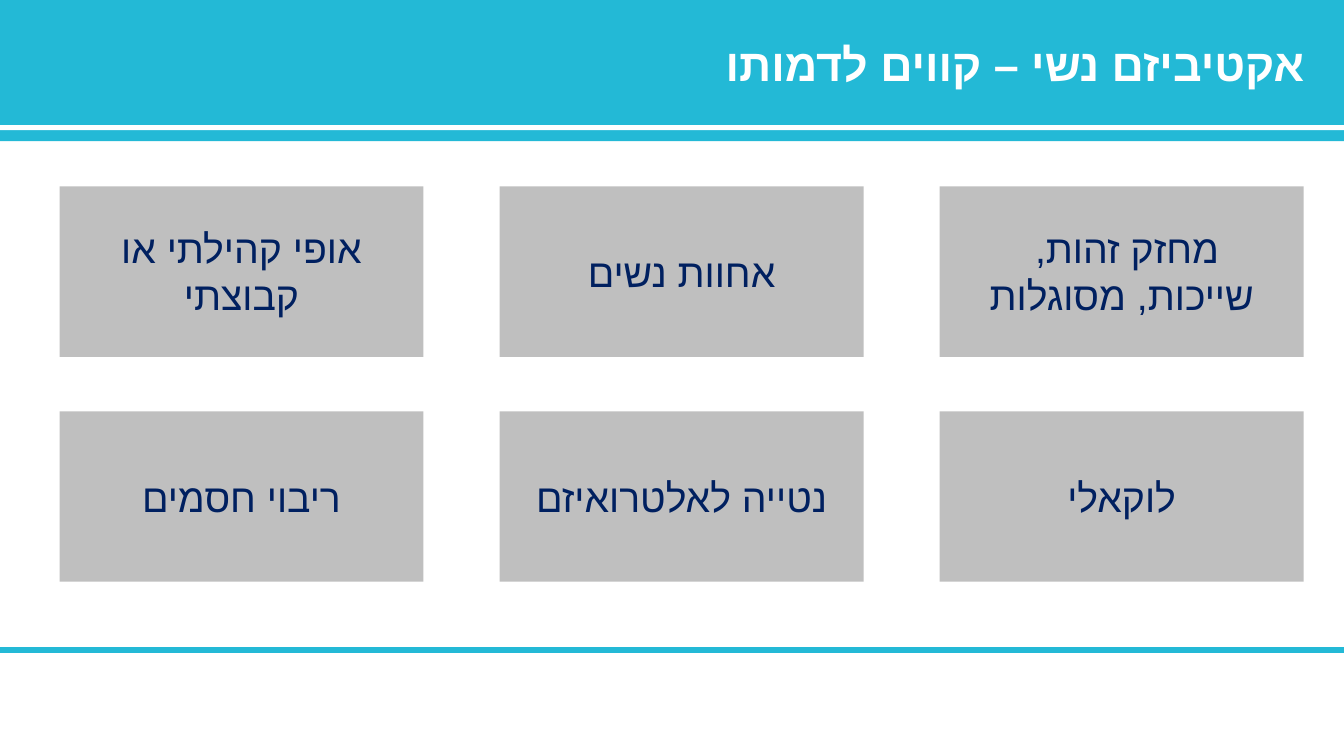
import pptx
import pptx.util
import pptx.dml.color
import pptx.enum.shapes
import pptx.enum.text
import pptx.oxml.ns
import lxml.etree

Inch = pptx.util.Inches
Align = pptx.enum.text.PP_ALIGN
CYAN, WHITE, GREY, NAVY = "23B9D6", "FFFFFF", "BFBFBF", "002060"


def paint(fmt, tone):
    if hasattr(fmt, "solid"):
        fmt.solid()
        fmt = fmt.fore_color
    fmt.rgb = pptx.dml.color.RGBColor.from_string(tone)


def write(shape, text, size, tone, align):
    frame = shape.text_frame
    frame.word_wrap = True
    frame.vertical_anchor = pptx.enum.text.MSO_ANCHOR.MIDDLE
    para = frame.paragraphs[0]
    para.text = text
    para.alignment = align
    para._p.get_or_add_pPr().set("rtl", "1")
    font = para.font
    font.name = "Arial"
    font.size = pptx.util.Pt(size)
    paint(font.color, tone)
    face = lxml.etree.SubElement(font._rPr, pptx.oxml.ns.qn("a:cs"))
    face.set("typeface", "Arial")
    return para


deck = pptx.Presentation()
deck.slide_width, deck.slide_height = Inch(13.33), Inch(7.5)
slide = deck.slides.add_slide(deck.slide_layouts[6])
shapes = slide.shapes
wide = deck.slide_width

rule = shapes.add_connector(
    pptx.enum.shapes.MSO_CONNECTOR.STRAIGHT, 0, Inch(6.45), wide, Inch(6.45))
rule.line.width = pptx.util.Pt(4.25)
paint(rule.line.color, CYAN)
lxml.etree.SubElement(rule._element.spPr, pptx.oxml.ns.qn("a:effectLst"))

bars = [(0, 0, wide, Inch(1.4), CYAN), (0, Inch(1.24), wide, Inch(0.05), WHITE)]

left, top = 0.59, 1.85
step, drop = 4.365, 2.23
grid = [
    ["אופי קהילתי או קבוצתי", "אחוות נשים", "מחזק זהות, \vשייכות, מסוגלות"],
    ["ריבוי חסמים", "נטייה לאלטרואיזם", "לוקאלי"],
]
cards = [
    (Inch(left + col * step), Inch(top + row * drop), Inch(3.61), Inch(1.69), GREY, text)
    for row, line in enumerate(grid) for col, text in enumerate(line)
]

for x, y, w, h, tone, *text in bars + cards:
    box = shapes.add_shape(pptx.enum.shapes.MSO_SHAPE.RECTANGLE, x, y, w, h)
    box.shadow.inherit = False
    paint(box.fill, tone)
    box.line.fill.background()
    if text:
        write(box, text[0], 28, NAVY, Align.CENTER)

title = shapes.add_textbox(Inch(0.92), Inch(0.17), Inch(12.12), Inch(0.98))
head = write(title, "אקטיביזם נשי – קווים לדמותו", 32, WHITE, Align.RIGHT)
head.line_spacing = 0.9
head.font.bold = True

deck.save("out.pptx")
